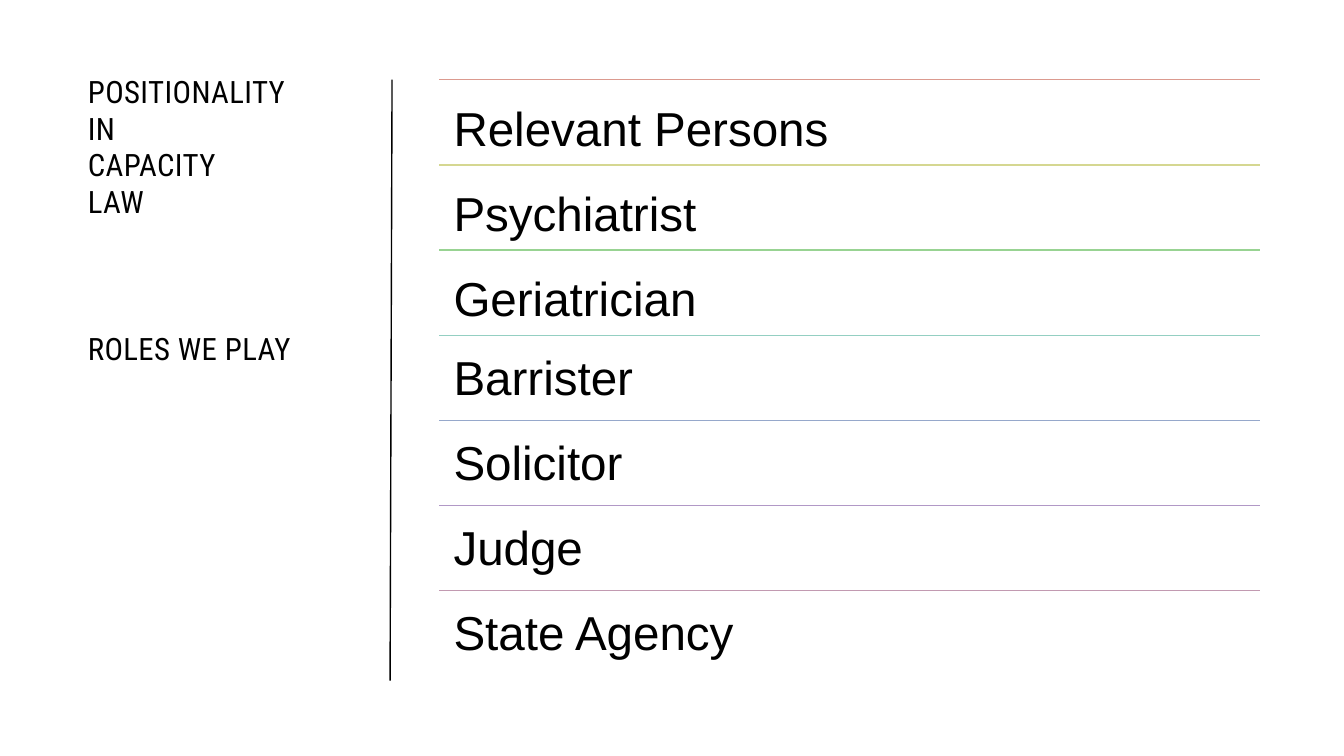
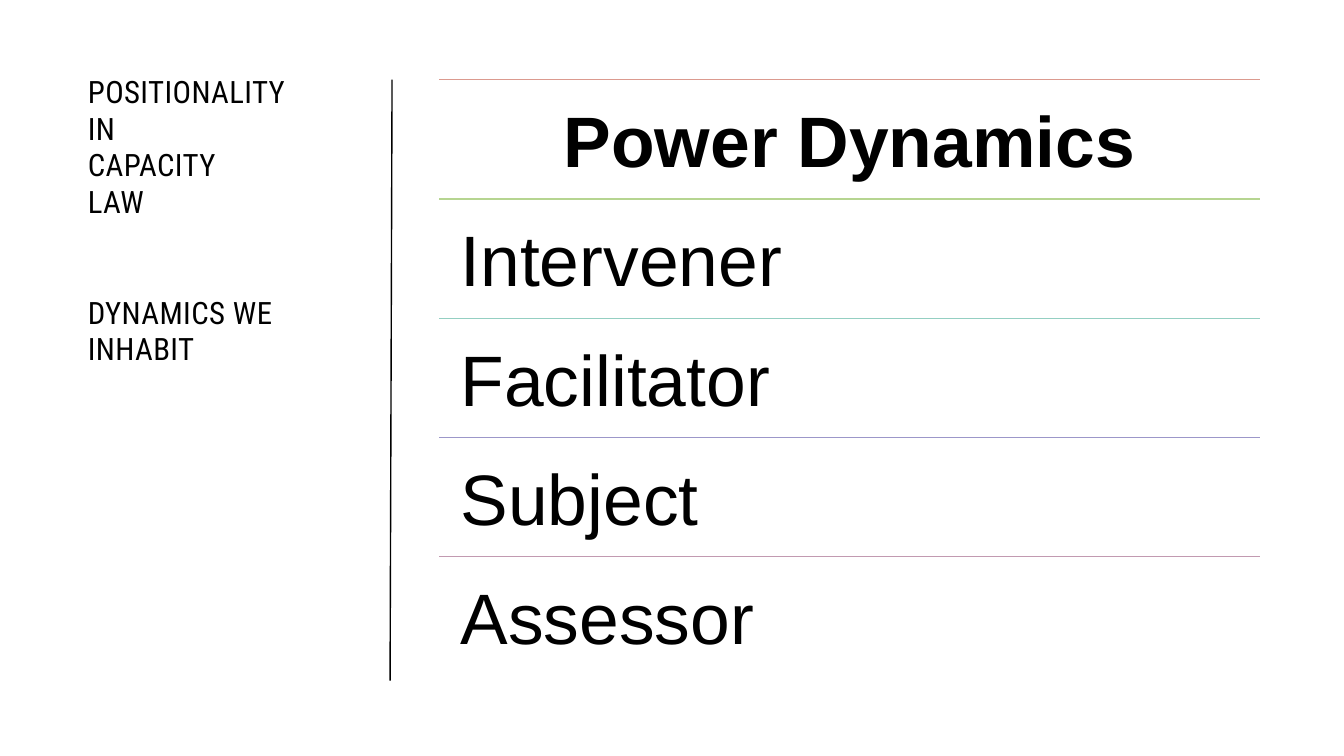
"""Builds two slides on positionality in capacity law."""
from lxml.etree import SubElement
from pptx import Presentation
from pptx.dml.color import RGBColor
from pptx.enum.shapes import MSO_CONNECTOR
from pptx.enum.text import MSO_ANCHOR, MSO_AUTO_SIZE, PP_ALIGN
from pptx.oxml.ns import qn
from pptx.util import Cm, Pt

BLACK = "000000"
HEADING = "POSITIONALITY\vIN\vCAPACITY\vLAW"
TITLE_FONT, BODY_FONT = "Roboto Condensed", "Arial"
TITLE_SIZE, TITLE_PITCH = 22, 26.3
LEFT, TOP, WIDTH, HEIGHT = 11.07, 2.01, 20.68, 15.02
TEXT_DROP = 0.12

SLIDES = [
    {
        "subtitle": "ROLES WE PLAY", "gap_lines": 3, "size": 34, "inset": 0.36,
        "rows": [
            ("Relevant Persons", "DB9A8F", 1.0),
            ("Psychiatrist", "D5D791", 1.0),
            ("Geriatrician", "98D392", 1.0),
            ("Barrister", "94CFC2", 0.9),
            ("Solicitor", "96A8CB", 0.9),
            ("Judge", "B198C6", 0.9),
            ("State Agency", "C29AB1", 0.9),
        ],
    },
    {
        "subtitle": "DYNAMICS WE\vINHABIT", "gap_lines": 2, "size": 51, "inset": 0.54,
        "header": "Power Dynamics",
        "rows": [
            ("Power Dynamics", "DB9A8F", 0.9),
            ("Intervener", "B6D591", 0.9),
            ("Facilitator", "94CFC2", 0.9),
            ("Subject", "9C97C9", 0.9),
            ("Assessor", "C29AB1", 0.9),
        ],
    },
]


def rgb(value):
    return RGBColor.from_string(value)


def style_runs(p, font, size, bold=False):
    for r in p.runs:
        r.font.name = font
        r.font.size = Pt(size)
        r.font.bold = bold
        r.font.color.rgb = rgb(BLACK)


def add_line(s, x1, y1, x2, y2, color):
    line = s.shapes.add_connector(MSO_CONNECTOR.STRAIGHT, Cm(x1), Cm(y1), Cm(x2), Cm(y2))
    line.line.color.rgb = rgb(color)
    line.line.width = Pt(1)
    SubElement(line._element.spPr, qn("a:effectLst"))


def add_title(s, subtitle, gap_lines):
    sp = s.shapes.title
    sp.left, sp.top, sp.width, sp.height = Cm(1.96), Cm(1.7), Cm(7.01), Cm(12.47)
    tf = sp.text_frame
    tf.auto_size = MSO_AUTO_SIZE.NONE
    tf.vertical_anchor = MSO_ANCHOR.TOP
    tf.word_wrap = True
    tf.text = HEADING
    p = tf.add_paragraph()
    p.text = subtitle
    p.space_before = Pt(gap_lines * TITLE_PITCH)
    for p in tf.paragraphs:
        p.alignment = PP_ALIGN.LEFT
        p.line_spacing = Pt(TITLE_PITCH)
        style_runs(p, TITLE_FONT, TITLE_SIZE)
        for r in p.runs:
            r._r.get_or_add_rPr().set("spc", "30")


def add_row(s, y, height, text, spacing, size, inset, header):
    sp = s.shapes.add_textbox(Cm(LEFT), Cm(y), Cm(WIDTH), Cm(height))
    tf = sp.text_frame
    tf.word_wrap = True
    tf.vertical_anchor = MSO_ANCHOR.TOP
    tf.margin_left = tf.margin_right = tf.margin_bottom = Cm(inset)
    tf.margin_top = Cm(inset + TEXT_DROP)
    tf.text = text
    p = tf.paragraphs[0]
    p.alignment = PP_ALIGN.CENTER if header else PP_ALIGN.LEFT
    p.line_spacing = spacing
    style_runs(p, BODY_FONT, size, header)


def add_list_slide(prs, data):
    s = prs.slides.add_slide(prs.slide_layouts[5])
    add_title(s, data["subtitle"], data["gap_lines"])
    add_line(s, 9.83, 17.15, 9.88, TOP, BLACK)
    pitch = HEIGHT / len(data["rows"])
    for i, (text, color, spacing) in enumerate(data["rows"]):
        y = TOP + i * pitch
        add_line(s, LEFT, y, LEFT + WIDTH, y, color)
        add_row(s, y, pitch, text, spacing, data["size"], data["inset"],
                text == data.get("header"))


def main():
    prs = Presentation()
    prs.slide_width, prs.slide_height = Cm(33.87), Cm(19.05)
    for data in SLIDES:
        add_list_slide(prs, data)
    prs.save("out.pptx")


if __name__ == "__main__":
    main()
